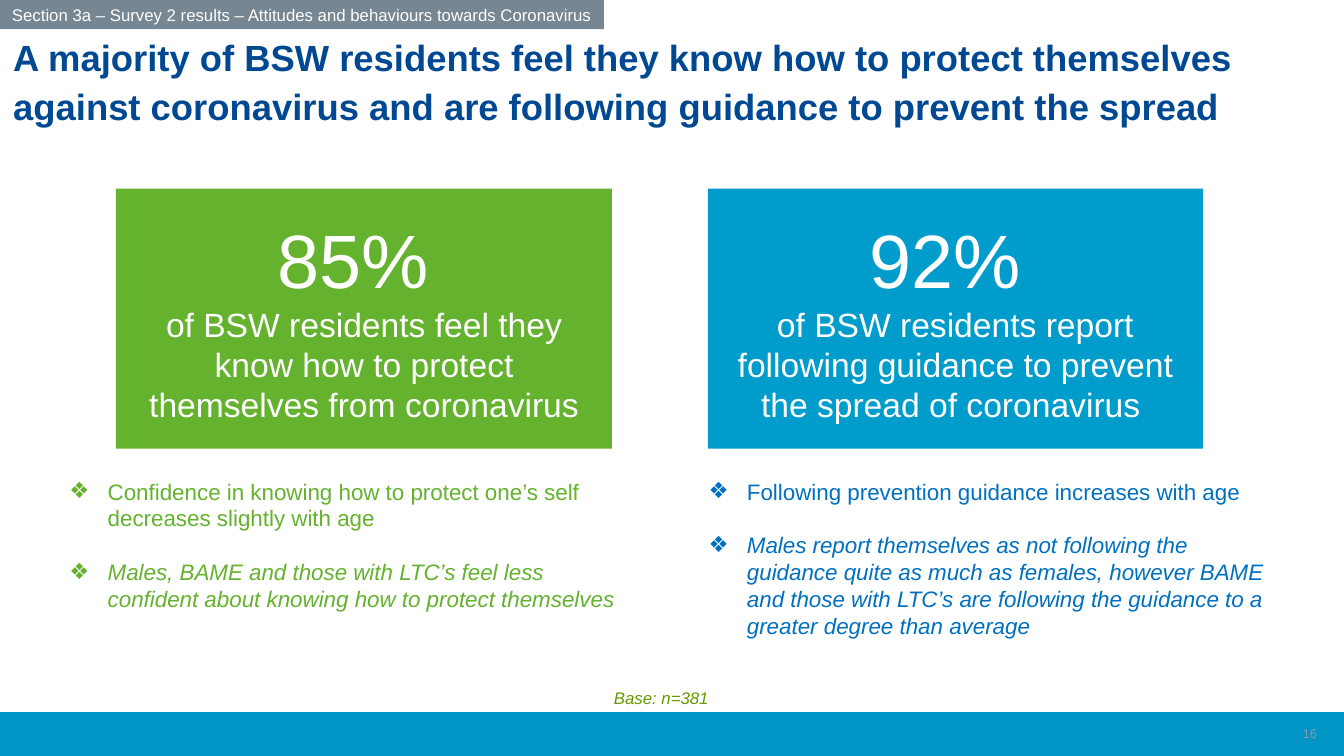
"""Build the survey slide on protecting against coronavirus."""
from dataclasses import dataclass

from lxml import etree
from pptx import Presentation
from pptx import util as u
from pptx.dml.color import RGBColor
from pptx.enum import shapes, text
from pptx.oxml import ns

FONT = "Arial"
COLOURS = {
    "bar": "0095C4",
    "number": "8C95B6",
    "title": "004992",
    "section": "768692",
    "white": "FFFFFF",
    "base": "669900",
    "green": "64B22D",
    "cyan": "009DCC",
    "blue": "0070C0",
}


@dataclass
class Finding:
    """A headline figure with the bullets below it."""

    figure: str
    statement: str
    fill: str
    bullet_colour: str
    card_left: float
    card_width: float
    bullets_left: float
    bullets_height: float
    trend: str
    detail: str


FINDINGS = [
    Finding(
        "85% ",
        "of BSW residents feel they know how to protect themselves from coronavirus",
        "green", "green", 1.15, 4.92, 0.59, 1.45,
        "Confidence in knowing how to protect one’s self decreases slightly with age",
        "Males, BAME and those with LTC’s feel less confident about knowing how to "
        "protect themselves",
    ),
    Finding(
        "92% ",
        "of BSW residents report following guidance to prevent the spread of coronavirus ",
        "cyan", "blue", 7.02, 4.91, 6.93, 1.72,
        "Following prevention guidance increases with age",
        "Males report themselves as not following the guidance quite as much as females, "
        "however BAME and those with LTC’s are following the guidance to a greater degree "
        "than average",
    ),
]


def colour(name: str) -> RGBColor:
    """Return the named colour."""
    return RGBColor.from_string(COLOURS[name])


def write(para, words: str, size: float, shade: str, align=text.PP_ALIGN.LEFT,
          bold: bool = False, italic: bool = False) -> None:
    """Fill a paragraph and set its font."""
    para.text = words
    para.alignment = align
    font = para.font
    font.name, font.size = FONT, u.Pt(size)
    font.bold, font.italic = bold, italic
    font.color.rgb = colour(shade)


def add_block(page, left: float, top: float, width: float, height: float, fill: str):
    """Add a plain filled rectangle."""
    box = page.shapes.add_shape(
        shapes.MSO_SHAPE.RECTANGLE,
        u.Inches(left), u.Inches(top), u.Inches(width), u.Inches(height))
    box.shadow.inherit = False
    box.fill.solid()
    box.fill.fore_color.rgb = colour(fill)
    box.line.fill.background()
    box.text_frame.vertical_anchor = text.MSO_ANCHOR.MIDDLE
    return box


def add_text(page, left: float, top: float, width: float, height: float,
             wrap: bool = True):
    """Add a text box and return its frame."""
    box = page.shapes.add_textbox(
        u.Inches(left), u.Inches(top), u.Inches(width), u.Inches(height))
    box.text_frame.word_wrap = wrap
    return box.text_frame


def add_bullet(para) -> None:
    """Give a paragraph a hanging diamond bullet."""
    properties = para._p.get_or_add_pPr()
    indent = u.Inches(0.38)
    properties.set("marL", str(indent))
    properties.set("indent", str(-indent))
    etree.SubElement(properties, ns.qn("a:buFont"), typeface=FONT)
    etree.SubElement(properties, ns.qn("a:buChar"), char="❖")


def add_finding(page, finding: Finding) -> None:
    """Draw a figure card and its bullets."""
    card = add_block(page, finding.card_left, 1.87, finding.card_width, 2.58, finding.fill)
    frame = card.text_frame
    write(frame.paragraphs[0], finding.figure, 54, "white", text.PP_ALIGN.CENTER)
    write(frame.add_paragraph(), finding.statement, 24, "white", text.PP_ALIGN.CENTER)

    bullets = add_text(page, finding.bullets_left, 4.69, 5.8, finding.bullets_height)
    first, second = bullets.paragraphs[0], bullets.add_paragraph()
    for para, words, italic in ((first, finding.trend, False), (second, finding.detail, True)):
        add_bullet(para)
        write(para, words, 16, finding.bullet_colour, italic=italic)
    second.space_before = u.Pt(19)


def set_title(page) -> None:
    """Place and format the slide title."""
    title = page.shapes.title
    title.left, title.top = u.Inches(-0.11), u.Inches(0.26)
    title.width, title.height = u.Inches(12.59), u.Inches(1.09)
    frame = title.text_frame
    frame.margin_left = frame.margin_right = u.Inches(0.24)
    frame.vertical_anchor = text.MSO_ANCHOR.TOP
    frame.auto_size = text.MSO_AUTO_SIZE.NONE
    para = frame.paragraphs[0]
    write(para, "A majority of BSW residents feel they know how to protect themselves "
          "against coronavirus and are following guidance to prevent the spread",
          26, "title", bold=True)
    para.line_spacing = 1.1


def main() -> None:
    """Build and save the deck."""
    deck = Presentation()
    deck.slide_width, deck.slide_height = u.Inches(13.33), u.Inches(7.5)
    page = deck.slides.add_slide(deck.slide_layouts[5])

    bar = add_block(page, 0, 7.07, 13.33, 0.43, "bar")
    bar.line.color.rgb = colour("bar")
    bar.line.width = u.Pt(1)
    number = add_text(page, 10.16, 7.08, 3, 0.4)
    number.vertical_anchor = text.MSO_ANCHOR.MIDDLE
    write(number.paragraphs[0], "16", 9, "number", text.PP_ALIGN.RIGHT)

    set_title(page)
    section = add_block(page, 0, 0, 5.99, 0.29, "section")
    write(section.text_frame.paragraphs[0],
          "Section 3a – Survey 2 results – Attitudes and behaviours towards Coronavirus",
          12, "white", text.PP_ALIGN.CENTER)
    base = add_text(page, 5.99, 6.77, 1.15, 0.3, wrap=False)
    write(base.paragraphs[0], "Base: n=381", 12, "base", italic=True)

    for finding in FINDINGS:
        add_finding(page, finding)
    deck.save("out.pptx")


if __name__ == "__main__":
    main()
